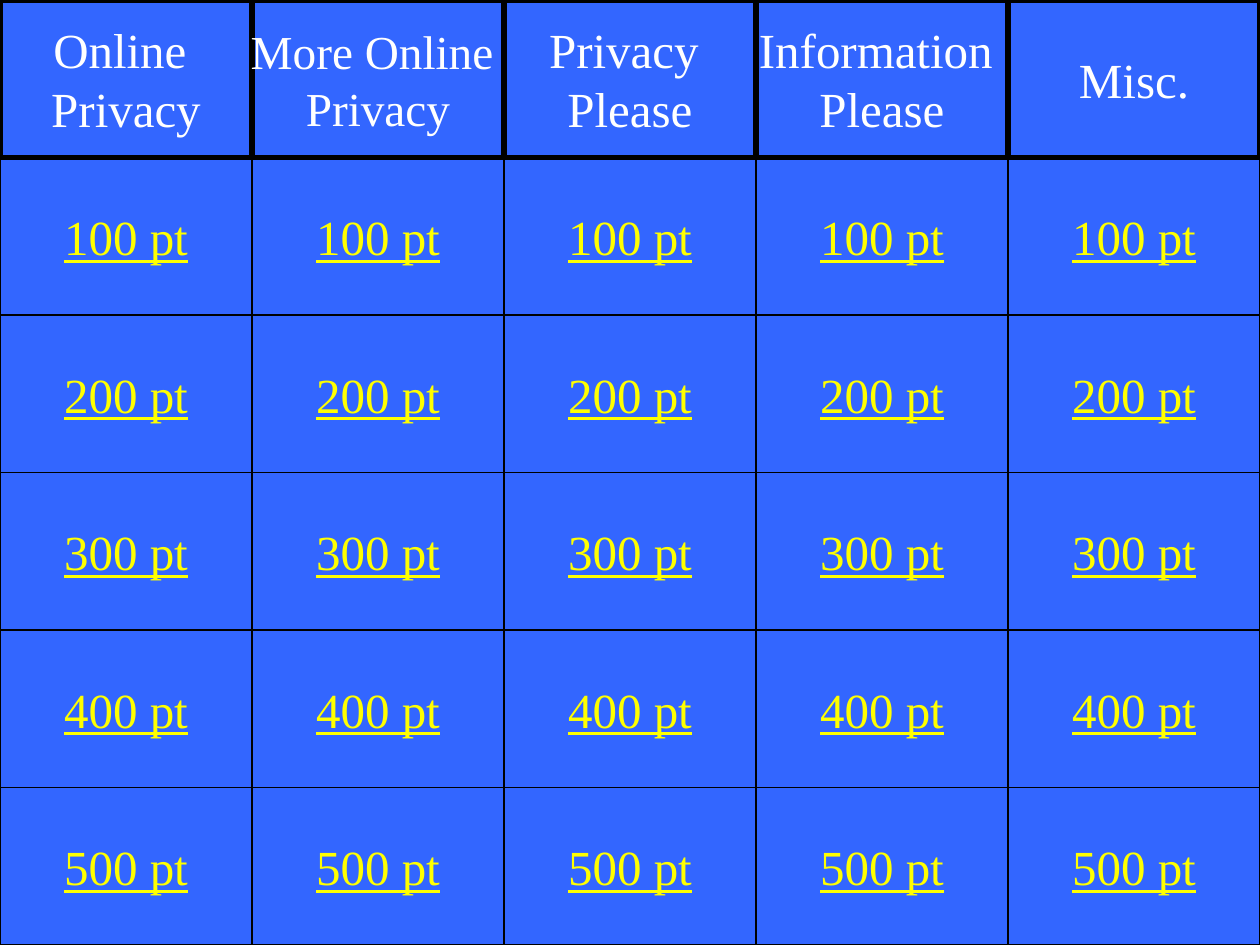
from pptx import Presentation
from pptx.dml.color import RGBColor
from pptx.enum.shapes import MSO_SHAPE as Shape
from pptx.enum.text import MSO_ANCHOR as Anchor, PP_ALIGN as Align
from pptx.util import Pt

# Each topic: its lines and the text size in points
TOPICS = [
    (["Online ", "Privacy"], 28),
    (["More Online ", "Privacy"], 27),
    (["Privacy ", "Please"], 28),
    (["Information ", "Please"], 28),
    (["Misc."], 28),
]
POINTS = [100, 200, 300, 400, 500]

COLORS = {"board": "3366FF", "edge": "000000", "topic": "FFFFFF", "points": "FFFF00"}
FONT = "Times New Roman"
PX = 9525  # EMU in one px, 96 px to the inch
WIDTH, HEIGHT = 960, 720
CELL_W = WIDTH // len(TOPICS)
CELL_H = HEIGHT // (len(POINTS) + 1)


def color(name):
    return RGBColor.from_string(COLORS[name])


def add_cell(slide, kind, col, row, lines, size, ink, edge, underline=None):
    """Add one board cell with centred lines of text."""
    cell = slide.shapes.add_shape(
        kind, col * CELL_W * PX, row * CELL_H * PX, CELL_W * PX, CELL_H * PX)
    cell.shadow.inherit = False
    cell.fill.solid()
    cell.fill.fore_color.rgb = color("board")
    cell.line.color.rgb = color("edge")
    cell.line.width = Pt(edge)

    frame = cell.text_frame
    frame.word_wrap = False
    frame.vertical_anchor = Anchor.MIDDLE
    for i, line in enumerate(lines):
        para = frame.add_paragraph() if i else frame.paragraphs[0]
        para.alignment = Align.CENTER
        run = para.add_run()
        run.text = line
        run.font.name = FONT
        run.font.size = Pt(size)
        run.font.underline = underline
        run.font.color.rgb = color(ink)


def main():
    deck = Presentation()
    deck.slide_width, deck.slide_height = WIDTH * PX, HEIGHT * PX
    slide = deck.slides.add_slide(deck.slide_layouts[6])
    slide.background.fill.solid()
    slide.background.fill.fore_color.rgb = color("board")

    for col in range(len(TOPICS)):
        for row, value in enumerate(POINTS, 1):
            add_cell(slide, Shape.ACTION_BUTTON_CUSTOM, col, row,
                     [f"{value} pt"], 28, "points", 0.75, underline=True)
    for col, (lines, size) in enumerate(TOPICS):
        add_cell(slide, Shape.RECTANGLE, col, 0, lines, size, "topic", 3)

    deck.save("out.pptx")


if __name__ == "__main__":
    main()
